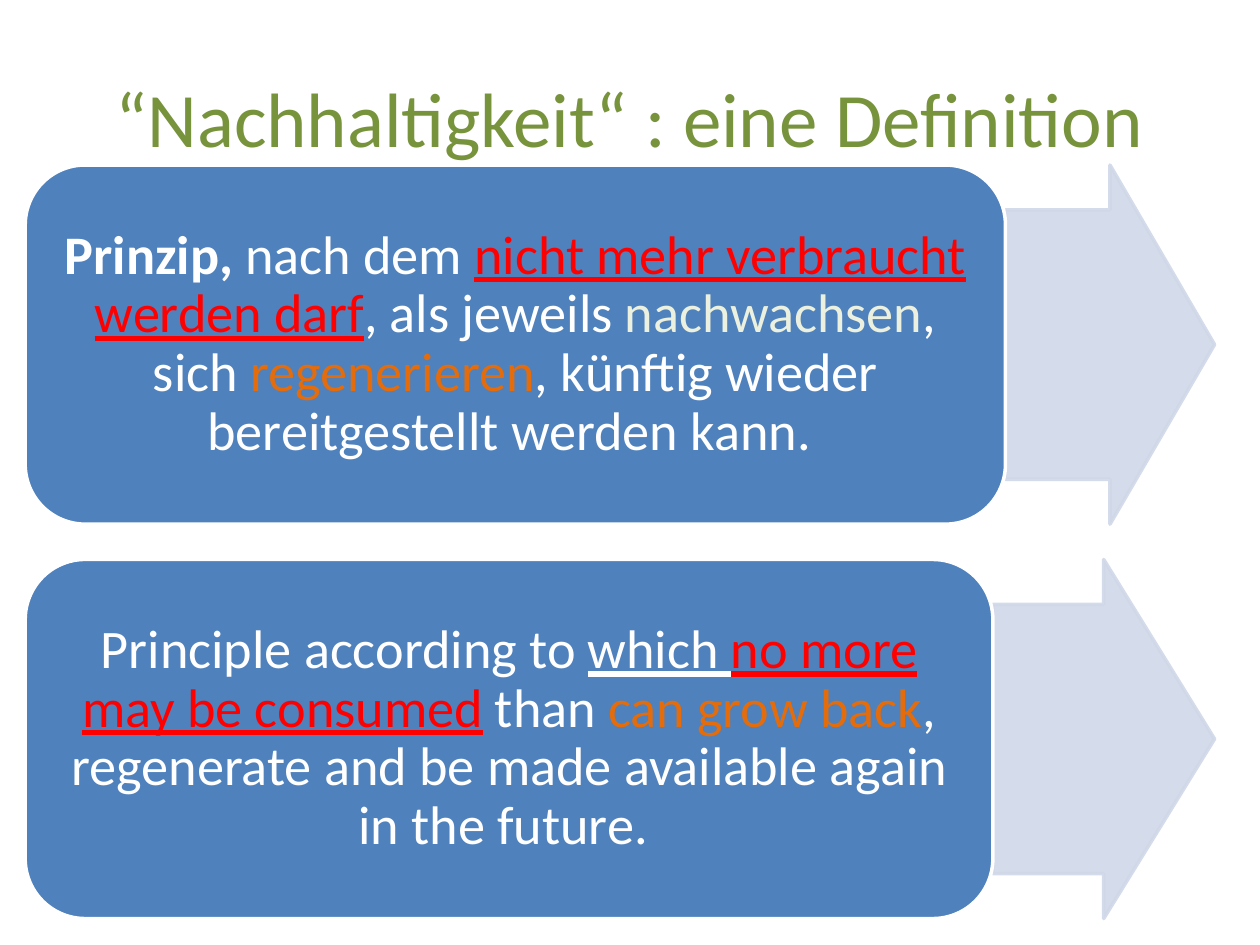
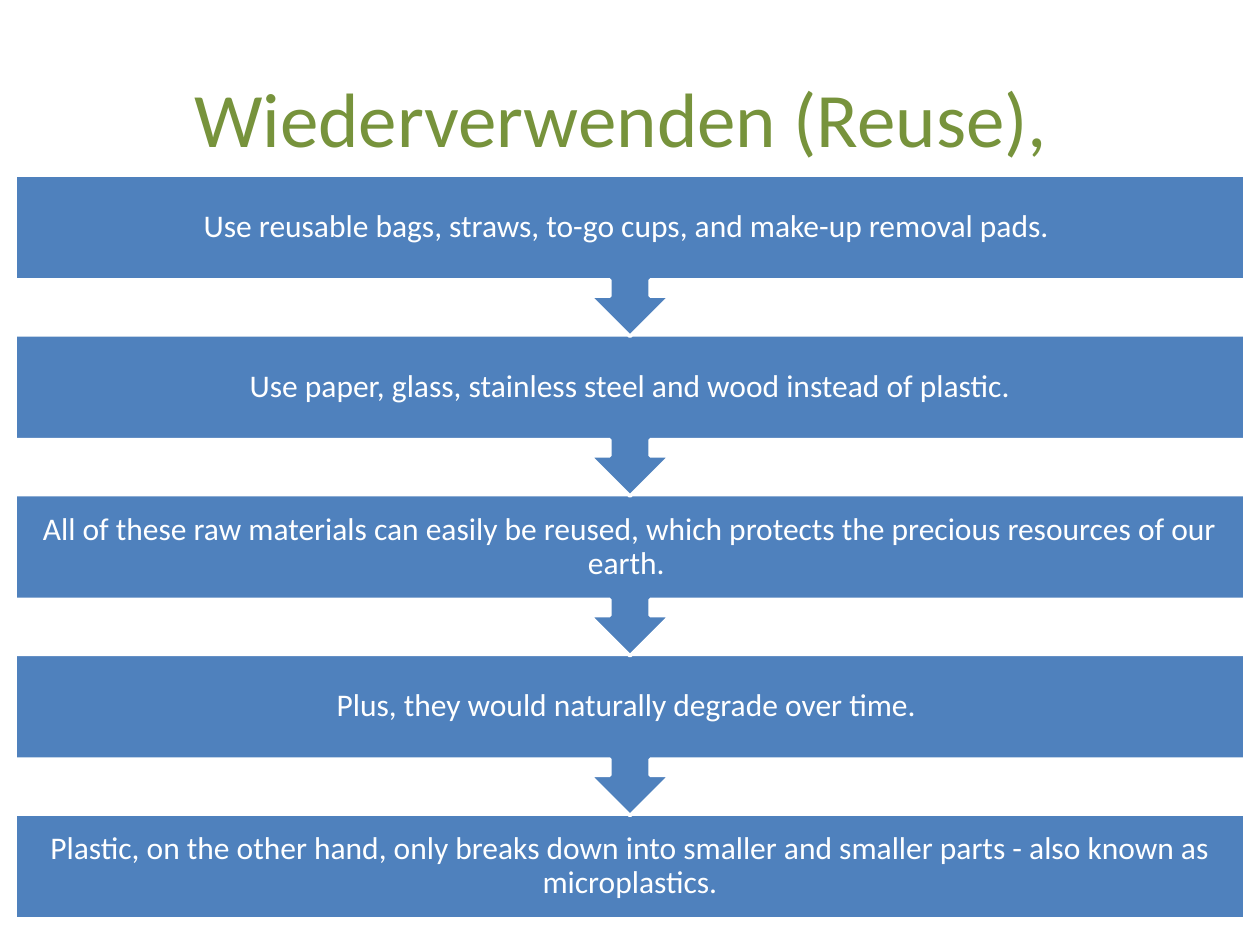
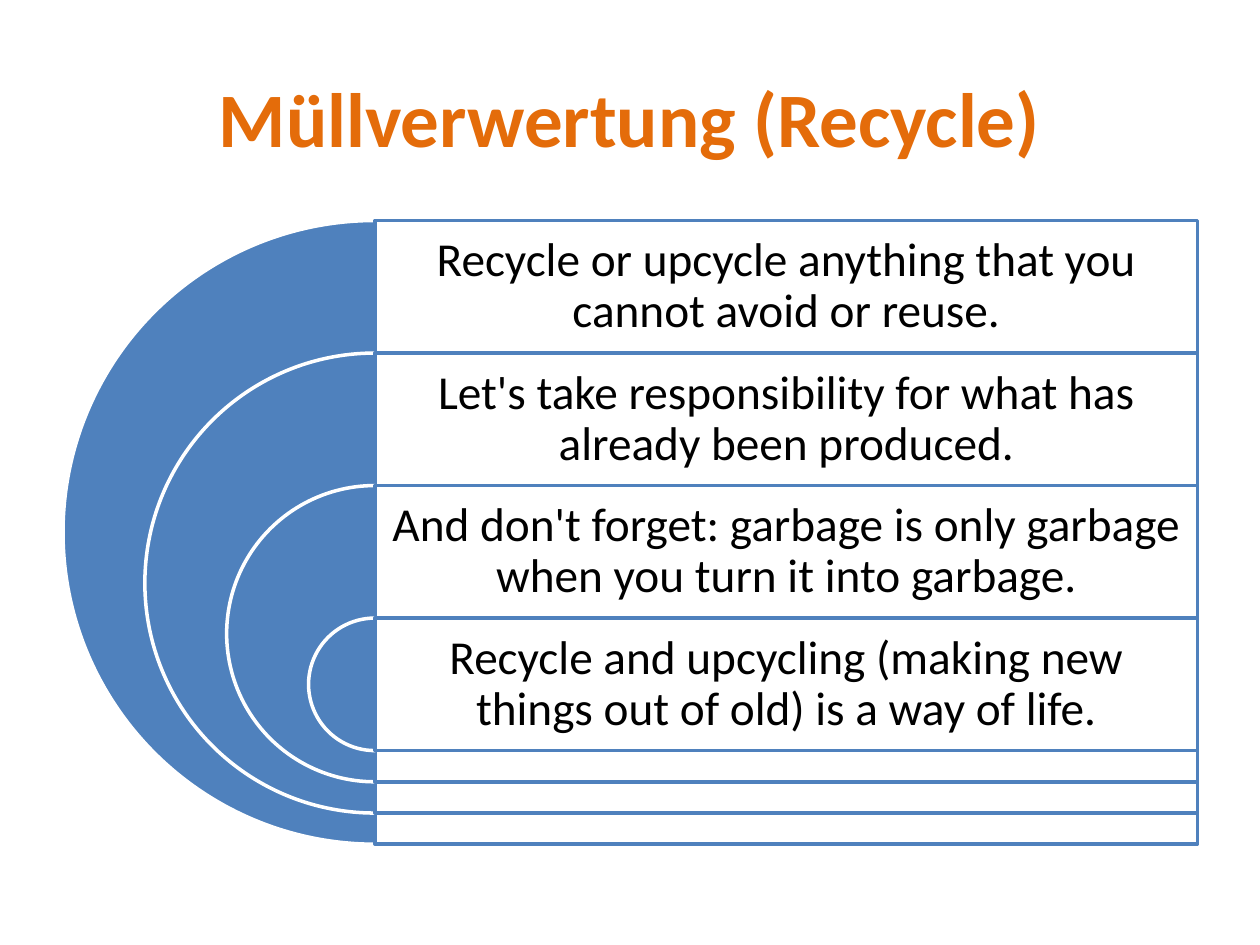
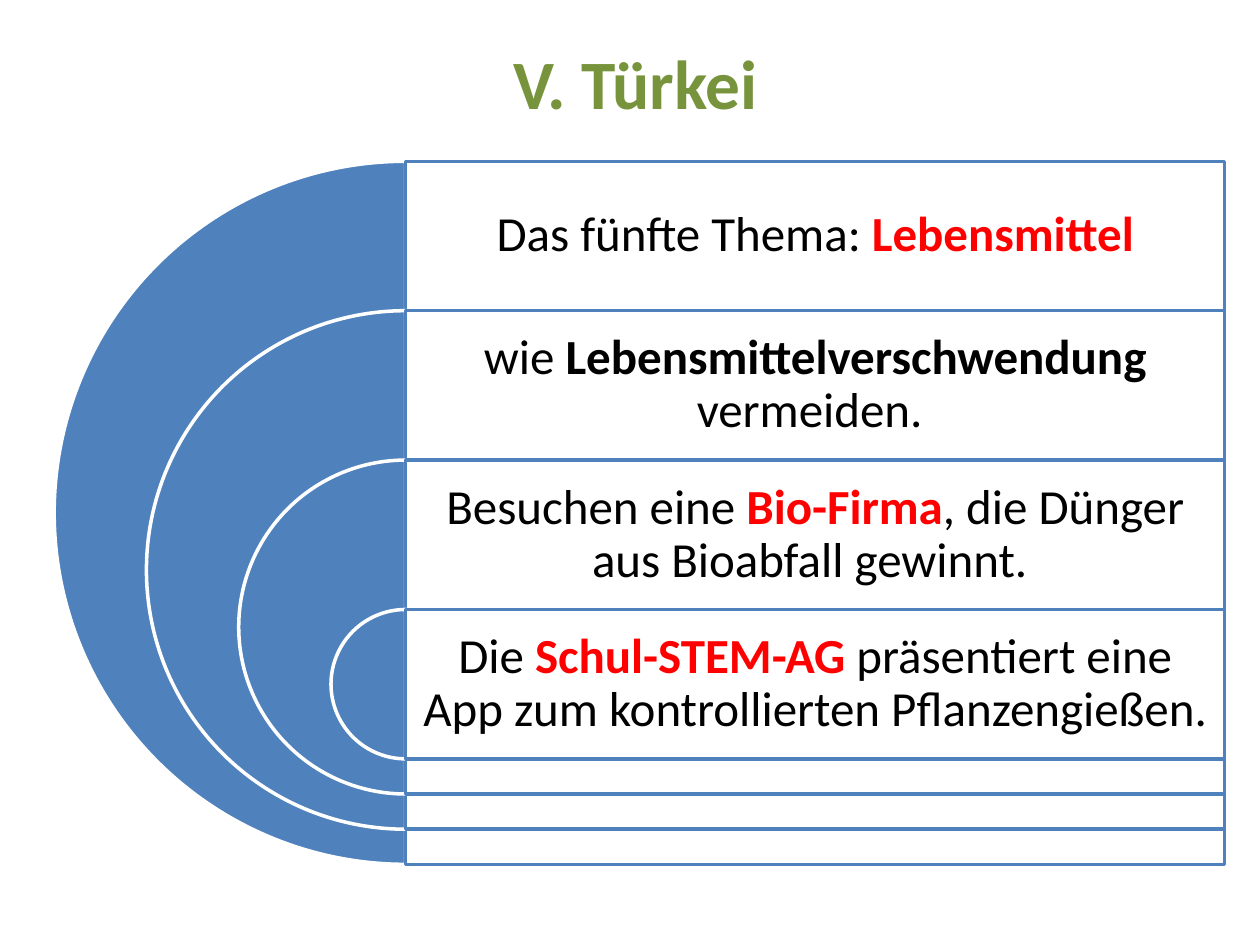
from dataclasses import dataclass
from typing import NamedTuple, Optional

from lxml.etree import SubElement
from pptx import Presentation
from pptx.dml.color import RGBColor
from pptx.enum.shapes import MSO_SHAPE as Preset
from pptx.enum.text import MSO_ANCHOR as Anchor, PP_ALIGN as Align
from pptx.oxml.ns import qn
from pptx.util import Inches, Pt

FONT = "Calibri"
BLUE = RGBColor(0x4F, 0x81, 0xBD)
PALE_BLUE = RGBColor(0xD0, 0xD8, 0xE8)
GREEN = RGBColor(0x77, 0x93, 0x3C)
PALE_GREEN = RGBColor(0xEB, 0xF1, 0xDE)
ORANGE = RGBColor(0xE4, 0x6C, 0x0A)
RED = RGBColor(0xFF, 0x00, 0x00)
BLACK = RGBColor(0x00, 0x00, 0x00)
WHITE = RGBColor(0xFF, 0xFF, 0xFF)
LINE_WIDTH = Pt(2)
OPACITY = 90
TEXT_SPACING = 0.9
ROW_SHARE = 17 / 80


class Area(NamedTuple):
    left: float
    top: float
    width: float
    height: float

    def lengths(self) -> list:
        return [Inches(value) for value in self]


class Phrase(NamedTuple):
    text: str
    color: Optional[RGBColor] = None
    bold: bool = False
    underline: bool = False


@dataclass
class TextStyle:
    size: float
    color: RGBColor
    inset_x: float
    inset_y: float
    bold: bool = False
    spacing: Optional[float] = TEXT_SPACING


@dataclass
class Definition:
    top: float
    width: float
    phrases: list


@dataclass
class CircleStack:
    left: float
    top: float
    diameter: float
    row_width: float
    style: TextStyle
    rows: list


TITLE_AREA = Area(0.5, 0.3, 9, 1.25)
DEFINITION_STYLE = TextStyle(31, WHITE, 0.13, 0.06)
STEP_STYLE = TextStyle(18, WHITE, 0.14, 0.14)

DEFINITIONS = [
    Definition(1.31, 7.78, [
        Phrase("Prinzip,", bold=True),
        Phrase(" nach dem "),
        Phrase("nicht mehr verbraucht werden darf", RED, underline=True),
        Phrase(", als jeweils "),
        Phrase("nachwachsen", PALE_GREEN),
        Phrase(", sich "),
        Phrase("regenerieren", ORANGE),
        Phrase(", künftig wieder bereitgestellt werden kann. "),
    ]),
    Definition(4.44, 7.68, [
        Phrase("Principle according to "),
        Phrase("which ", underline=True),
        Phrase("no more may be consumed", RED, underline=True),
        Phrase(" than "),
        Phrase("can grow back", ORANGE),
        Phrase(", regenerate and be made available again in the future. "),
    ]),
]

REUSE_STEPS = [
    "Use reusable bags, straws, to-go cups, and make-up removal pads. ",
    "Use paper, glass, stainless steel and wood instead of plastic.",
    "All of these raw materials can easily be reused, which protects the precious resources of our earth. ",
    "Plus, they would naturally degrade over time. ",
    "Plastic, on the other hand, only breaks down into smaller and smaller parts - also known as microplastics.",
]

RECYCLE_STACK = CircleStack(0.5, 1.75, 4.95, 6.53, TextStyle(27, BLACK, 0.11, 0.11), [
    [Phrase("Recycle or upcycle anything that you cannot avoid or reuse.")],
    [Phrase("Let's take responsibility for what has already been produced.")],
    [Phrase("And don't forget: garbage is only garbage when you turn it into garbage.")],
    [Phrase("Recycle and upcycling (making new things out of old) is a way of life.")],
])

TURKEY_STACK = CircleStack(0.43, 1.28, 5.58, 6.5, TextStyle(28, BLACK, 0.12, 0.12), [
    [Phrase("Das fünfte Thema: "), Phrase("Lebensmittel", RED, bold=True)],
    [Phrase("wie "), Phrase("Lebensmittelverschwendung ", bold=True), Phrase("vermeiden. ")],
    [Phrase("Besuchen eine "), Phrase("Bio-Firma", RED, bold=True),
     Phrase(", die Dünger aus Bioabfall gewinnt. ")],
    [Phrase("Die "), Phrase("Schul-STEM-AG ", RED, bold=True),
     Phrase("präsentiert eine App zum kontrollierten Pflanzengießen.")],
])


def set_opacity(properties) -> None:
    for color in properties.find(qn("a:solidFill")):
        SubElement(color, qn("a:alpha"), val=str(OPACITY * 1000))


def add_preset(slide, preset, area: Area, fill: RGBColor, line: RGBColor,
               adjustments: tuple = ()):
    shape = slide.shapes.add_shape(preset, *area.lengths())
    shape.shadow.inherit = False
    shape.fill.solid()
    shape.fill.fore_color.rgb = fill
    shape.line.color.rgb = line
    shape.line.width = LINE_WIDTH
    for index, value in enumerate(adjustments):
        shape.adjustments[index] = value
    return shape


def write_text(frame, phrases: list, style: TextStyle) -> None:
    frame.word_wrap = True
    frame.vertical_anchor = Anchor.MIDDLE
    frame.margin_left = frame.margin_right = Inches(style.inset_x)
    frame.margin_top = frame.margin_bottom = Inches(style.inset_y)
    paragraph = frame.paragraphs[0]
    paragraph.alignment = Align.CENTER
    paragraph.line_spacing = style.spacing
    paragraph.font.name = FONT
    paragraph.font.size = Pt(style.size)
    paragraph.font.bold = style.bold
    paragraph.font.color.rgb = style.color
    for phrase in phrases:
        run = paragraph.add_run()
        run.text = phrase.text
        if phrase.color is not None:
            run.font.color.rgb = phrase.color
        if phrase.bold:
            run.font.bold = True
        if phrase.underline:
            run.font.underline = True


def add_text(slide, area: Area, phrases: list, style: TextStyle) -> None:
    write_text(slide.shapes.add_textbox(*area.lengths()).text_frame, phrases, style)


def add_titled_slide(deck, title: str, color: RGBColor, bold: bool = False,
                     area: Area = TITLE_AREA, size: float = 44):
    slide = deck.slides.add_slide(deck.slide_layouts[6])
    style = TextStyle(size, color, 0.1, 0.05, bold, None)
    add_text(slide, area, [Phrase(title)], style)
    return slide


def draw_definition(slide, definition: Definition) -> None:
    left, right, height = 0.2, 9.64, 2.85
    panel_right = left + definition.width
    arrow_area = Area(panel_right, definition.top, right - panel_right, height)
    arrow = add_preset(slide, Preset.RIGHT_ARROW, arrow_area, PALE_BLUE, PALE_BLUE,
                       (0.75, 0.5))
    properties = arrow.element.spPr
    set_opacity(properties)
    set_opacity(properties.find(qn("a:ln")))
    panel_area = Area(left, definition.top, definition.width, height)
    panel = add_preset(slide, Preset.ROUNDED_RECTANGLE, panel_area, BLUE, WHITE)
    write_text(panel.text_frame, definition.phrases, DEFINITION_STYLE)


def draw_steps(slide, steps: list) -> None:
    left, width, first_top, last_top = 0.12, 9.76, 1.39, 6.46
    bar_height, callout_height = 0.83, 1.28
    last = len(steps) - 1
    pitch = (last_top - first_top) / last
    for index in range(last, -1, -1):
        bar = Area(left, first_top + index * pitch, width, bar_height)
        if index == last:
            add_preset(slide, Preset.RECTANGLE, bar, BLUE, WHITE)
        else:
            callout = add_preset(slide, Preset.UP_ARROW_CALLOUT,
                                 bar._replace(height=callout_height), BLUE, WHITE)
            callout.rotation = 180
        add_text(slide, bar, [Phrase(steps[index])], STEP_STYLE)


def draw_circle_stack(slide, stack: CircleStack) -> None:
    center = stack.left + stack.diameter / 2
    row_height = stack.diameter * ROW_SHARE
    shrink = (stack.diameter - row_height) / (len(stack.rows) - 1)
    for index, phrases in enumerate(stack.rows):
        diameter = stack.diameter - index * shrink
        top = stack.top + index * row_height
        half_circle = Area(center - diameter / 2, top, diameter, diameter)
        add_preset(slide, Preset.PIE, half_circle, BLUE, WHITE, (54, 162))
        panel_area = Area(center, top, stack.row_width, diameter)
        panel = add_preset(slide, Preset.RECTANGLE, panel_area, WHITE, BLUE)
        set_opacity(panel.element.spPr)
        add_text(slide, panel_area._replace(height=row_height), phrases, stack.style)


def main() -> None:
    deck = Presentation()
    deck.slide_width = Inches(10)
    deck.slide_height = Inches(7.5)

    definition_slide = add_titled_slide(deck, "“Nachhaltigkeit“ : eine Definition", GREEN)
    for definition in DEFINITIONS:
        draw_definition(definition_slide, definition)

    reuse_slide = add_titled_slide(deck, "Wiederverwenden (Reuse), ", GREEN)
    draw_steps(reuse_slide, REUSE_STEPS)

    recycle_slide = add_titled_slide(deck, "Müllverwertung (Recycle)", ORANGE, bold=True)
    draw_circle_stack(recycle_slide, RECYCLE_STACK)

    turkey_slide = add_titled_slide(deck, "V. Türkei", GREEN, bold=True,
                                    area=Area(0.59, 0.3, 8.91, 0.69), size=39.6)
    draw_circle_stack(turkey_slide, TURKEY_STACK)

    deck.save("out.pptx")


if __name__ == "__main__":
    main()
